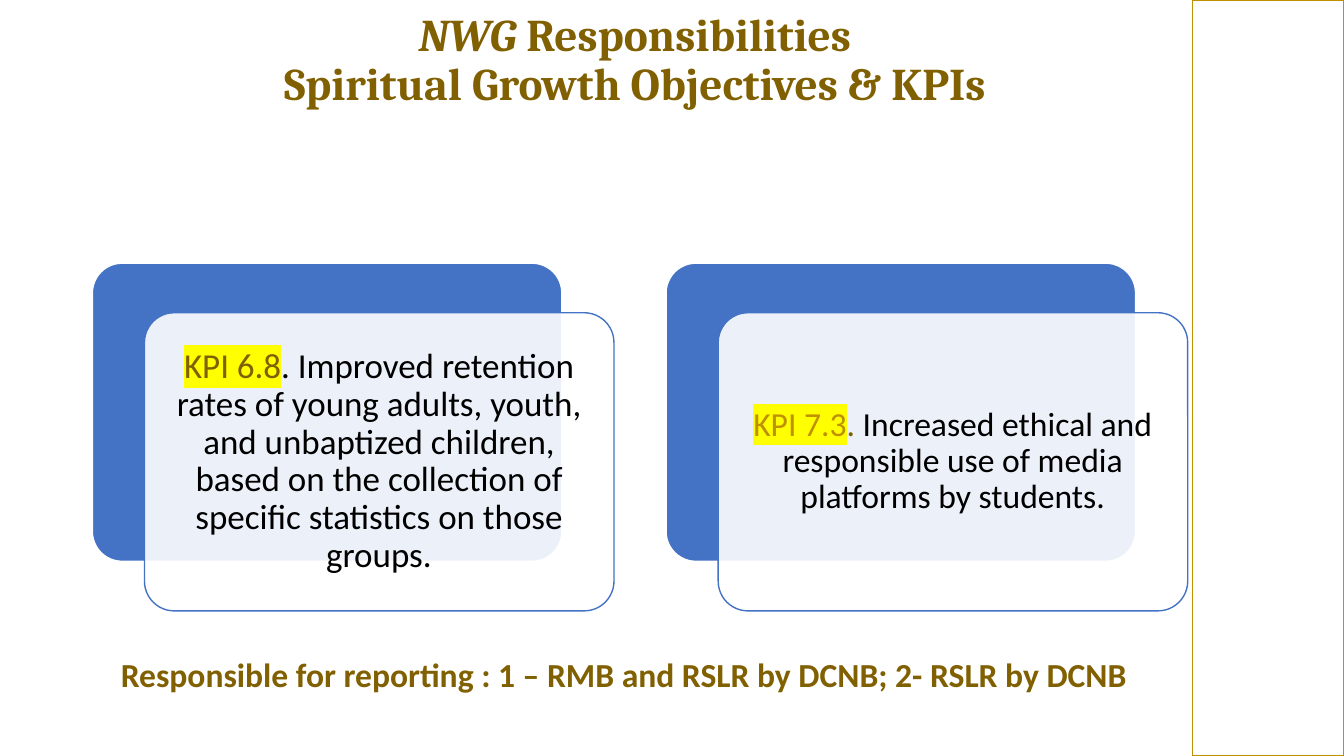
"""Build the slide of spiritual growth objectives and their KPIs."""
import pptx
import pptx.util
import pptx.dml.color
import pptx.enum.shapes
import pptx.enum.text
import pptx.oxml.ns
from dataclasses import dataclass
from lxml import etree

Pt = pptx.util.Pt
ALIGN = pptx.enum.text.PP_ALIGN
ANCHOR = pptx.enum.text.MSO_ANCHOR
SHAPE = pptx.enum.shapes.MSO_SHAPE
qn = pptx.oxml.ns.qn


@dataclass(frozen=True)
class Theme:
    brown: str = "806000"
    gold: str = "BF9000"
    blue: str = "4472C4"
    white: str = "FFFFFF"
    black: str = "000000"
    yellow: str = "FFFF00"
    heading_font: str = "Cambria"
    body_font: str = "Calibri"
    title_size: float = 32.4
    card_sizes: tuple = (25, 24)
    note_size: float = 24


theme = Theme()
rgb = pptx.dml.color.RGBColor.from_string


def add_span(para, text, font, size, color, bold=False, italic=False, highlight=None):
    span = para.add_run()
    span.text = text
    span.font.name = font
    span.font.size = Pt(size)
    span.font.bold = bold
    span.font.italic = italic
    span.font.color.rgb = rgb(color)
    if highlight:
        mark = etree.Element(qn("a:highlight"))
        etree.SubElement(mark, qn("a:srgbClr"), val=highlight)
        span.font.fill._xPr.find(qn("a:solidFill")).addnext(mark)


def add_panel(page, kind, left, top, width, height, line, fill=None, opacity=100):
    panel = page.shapes.add_shape(kind, Pt(left), Pt(top), Pt(width), Pt(height))
    panel.shadow.inherit = False
    panel.line.color.rgb = rgb(line)
    panel.line.width = Pt(1)
    if kind == SHAPE.ROUNDED_RECTANGLE:
        panel.adjustments[0] = 0.1
    if fill is None:
        panel.fill.background()
        return
    panel.fill.solid()
    panel.fill.fore_color.rgb = rgb(fill)
    if opacity < 100:
        color = panel.fill._xPr.find(qn("a:solidFill"))[0]
        etree.SubElement(color, qn("a:alpha"), val=str(opacity * 1000))


deck = pptx.Presentation()
deck.slide_width, deck.slide_height = Pt(960), Pt(540)
page = deck.slides.add_slide(deck.slide_layouts[6])

title = page.shapes.add_textbox(Pt(66), Pt(5.6), Pt(775), Pt(76)).text_frame
title.word_wrap = True
title.vertical_anchor = ANCHOR.MIDDLE
title_lines = [
    [("NWG ", True), ("Responsibilities", False)],
    [("Spiritual Growth Objectives & KPIs", False)],
]
for number, line in enumerate(title_lines):
    para = title.add_paragraph() if number else title.paragraphs[0]
    para.alignment = ALIGN.CENTER
    para.line_spacing = 0.9
    for text, italic in line:
        add_span(para, text, theme.heading_font, theme.title_size, theme.brown, True, italic)

add_panel(page, SHAPE.RECTANGLE, 852, 0, 108, 540, theme.gold)

cards = [
    [
        ("KPI 6.8", theme.brown, theme.yellow),
        (". Improved retention rates of young adults, youth, and unbaptized children, "
         "based on the collection of specific statistics on those groups.", theme.black, None),
    ],
    [
        ("KPI 7.3", theme.gold, theme.yellow),
        (". ", theme.brown, None),
        ("Increased ethical and responsible use of media platforms by students.",
         theme.black, None),
    ],
]
card_left, card_top, card_width, card_height, card_pitch = 66, 188, 335.4, 213, 409.8
for number, (size, spans) in enumerate(zip(theme.card_sizes, cards)):
    left = card_left + number * card_pitch
    add_panel(page, SHAPE.ROUNDED_RECTANGLE, left, card_top, card_width, card_height,
              theme.white, theme.blue)
    add_panel(page, SHAPE.ROUNDED_RECTANGLE, left + 37.2, card_top + 35.4, card_width,
              card_height, theme.blue, theme.white, 90)
    box = page.shapes.add_textbox(Pt(left + 43.4), Pt(card_top + 41.6), Pt(322.6), Pt(200.4))
    frame = box.text_frame
    frame.word_wrap = True
    frame.vertical_anchor = ANCHOR.MIDDLE
    frame.margin_top = frame.margin_bottom = Pt(7.2)
    para = frame.paragraphs[0]
    para.alignment = ALIGN.CENTER
    para.line_spacing = 0.9
    for text, color, highlight in spans:
        add_span(para, text, theme.body_font, size, color, highlight=highlight)

note = page.shapes.add_textbox(Pt(79.2), Pt(463.4), Pt(751), Pt(36)).text_frame
note.word_wrap = False
add_span(note.paragraphs[0],
         "Responsible for reporting : 1 – RMB and RSLR by DCNB; 2- RSLR by DCNB",
         theme.body_font, theme.note_size, theme.brown, True)

deck.save("out.pptx")
